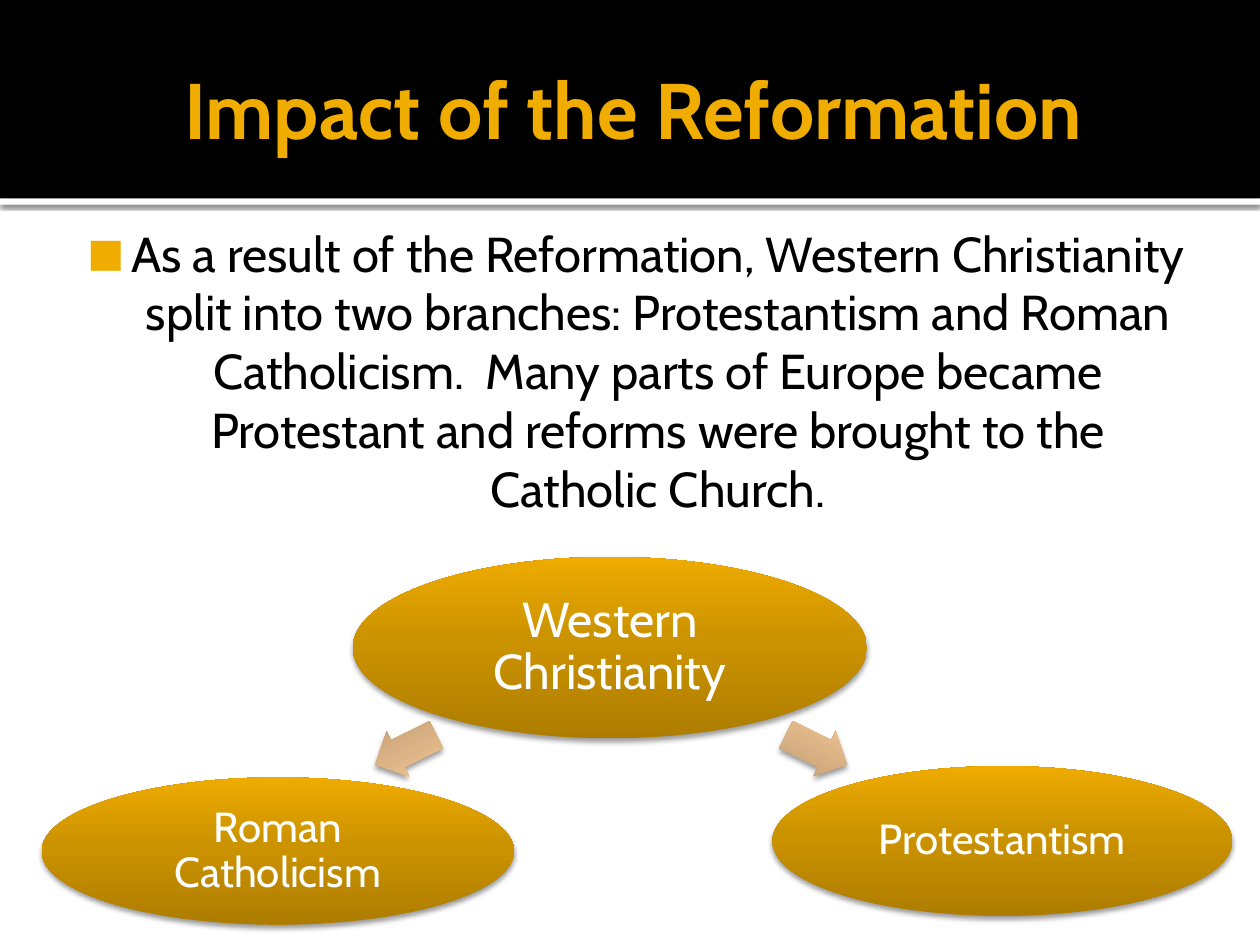
from lxml import etree
from pptx import Presentation
from pptx.dml.color import RGBColor
from pptx.enum.shapes import MSO_SHAPE
from pptx.enum.text import MSO_ANCHOR, PP_ALIGN
from pptx.oxml.ns import qn
from pptx.util import Inches, Pt

RECT, OVAL, ARROW = MSO_SHAPE.RECTANGLE, MSO_SHAPE.OVAL, MSO_SHAPE.RIGHT_ARROW
TOP, MIDDLE = MSO_ANCHOR.TOP, MSO_ANCHOR.MIDDLE
CENTER = PP_ALIGN.CENTER
W, H = 10, 7.5
FONT = "Cabin"
GOLD, BLACK, WHITE = "F0AD00", "000000", "FFFFFF"
GOLD_STOPS = [(0, "AE7D00"), (55, "CC9300"), (100, "EEAB00")]
TAN_STOPS = [(0, "BC9972"), (55, "DDB486"), (100, "FFD29E")]
SOFT_SHADOW = (38, 3.1, 2)
BAR_SHADOW = (60, 2.5, 0.8)


def rgb(color):
    """Turn a hex string into a colour."""
    return RGBColor.from_string(color)


def child(parent, tag, **attrs):
    """Append a DrawingML element with the given attributes."""
    el = etree.SubElement(parent, qn("a:" + tag))
    for name, value in attrs.items():
        el.set(name, str(value))
    return el


def add_shadow(sp, alpha, blur, dist):
    """Give a shape a black shadow falling straight down."""
    effects = sp._element.spPr.find(qn("a:effectLst"))
    shadow = child(effects, "outerShdw", blurRad=Pt(blur), dist=Pt(dist),
                   dir=90 * 60000, algn="ctr", rotWithShape=0)
    child(child(shadow, "srgbClr", val=BLACK), "alpha", val=alpha * 1000)


def set_gradient(sp, stops):
    """Fill a shape with stops running from bottom to top."""
    sp.fill.gradient()
    sp.fill.gradient_angle = 90
    gs_list = sp._element.spPr.find(qn("a:gradFill")).find(qn("a:gsLst"))
    for old in list(gs_list):
        gs_list.remove(old)
    for pos, color in stops:
        child(child(gs_list, "gs", pos=pos * 1000), "srgbClr", val=color)


def add_shape(s, kind, box, fill, shadow=None):
    """Add an unlined shape with a solid colour or a list of gradient stops."""
    sp = s.shapes.add_shape(kind, *map(Inches, box))
    if isinstance(fill, str):
        sp.fill.solid()
        sp.fill.fore_color.rgb = rgb(fill)
    else:
        set_gradient(sp, fill)
    sp.line.fill.background()
    sp.shadow.inherit = False
    if shadow:
        add_shadow(sp, *shadow)
    return sp


def write(sp, text, size, color, insets, anchor=MIDDLE, bold=False):
    """Write one centred paragraph and return it."""
    tf = sp.text_frame
    tf.word_wrap = True
    tf.vertical_anchor = anchor
    tf.margin_left, tf.margin_top, tf.margin_right, tf.margin_bottom = map(Inches, insets)
    p = tf.paragraphs[0]
    p.alignment = CENTER
    r = p.add_run()
    r.text = text
    r.font.name, r.font.size, r.font.bold = FONT, Pt(size), bold
    r.font.color.rgb = rgb(color)
    return p


def add_text(s, box, *args, **kwargs):
    """Add a text box with one paragraph and return the paragraph."""
    return write(s.shapes.add_textbox(*map(Inches, box)), *args, **kwargs)


def add_bullet(p, char, color, percent, left, indent):
    """Give a paragraph a coloured bullet with a hanging indent."""
    pPr = p._p.get_or_add_pPr()
    pPr.set("marL", str(Inches(left)))
    pPr.set("indent", str(Inches(indent)))
    child(child(pPr, "buClr"), "srgbClr", val=color)
    child(pPr, "buSzPct", val=percent * 1000)
    child(pPr, "buFont", typeface=FONT)
    child(pPr, "buChar", char=char)


def add_branch(s, text, size, box):
    """Add a gold ellipse with its label."""
    sp = add_shape(s, OVAL, box, GOLD_STOPS, SOFT_SHADOW)
    write(sp, text, size, WHITE, [0.03] * 4).line_spacing = 0.9


def add_arrow(s, box, rotation):
    """Add a tan block arrow turned by the given degrees."""
    sp = add_shape(s, ARROW, box, TAN_STOPS, SOFT_SHADOW)
    sp.adjustments[0], sp.adjustments[1] = 0.6, 0.5
    sp.rotation = rotation


def main():
    """Build the slide and save it."""
    prs = Presentation()
    prs.slide_width, prs.slide_height = Inches(W), Inches(H)
    s = prs.slides.add_slide(prs.slide_layouts[6])
    band = 0.21 * H
    margin = 0.05 * W
    add_shape(s, RECT, (0, band, W, 0.05), WHITE, BAR_SHADOW)
    add_shape(s, RECT, (0, 0, W, band), BLACK)
    add_text(s, (margin, 0.17, W - 2 * margin, 1.37), "Impact of the Reformation",
             45, GOLD, (0.1, 0.05, 0.05, 0.05), bold=True)
    p = add_text(s, (margin, 1.67, W - 2 * margin, 2.92),
                 "As a result of the Reformation, Western Christianity split into two "
                 "branches: Protestantism and Roman Catholicism.\u00a0 Many parts of Europe "
                 "became Protestant and reforms were brought to the Catholic Church.",
                 28, BLACK, (0.06, 0.1, 0.1, 0.05), anchor=TOP)
    add_bullet(p, "■", GOLD, 80, 0.48, -0.35)
    add_branch(s, "Roman Catholicism", 24, (0.33, 6.17, 3.75, 1.17))
    add_branch(s, "Western Christianity", 28, (2.8, 4.42, 4.08, 1.44))
    add_branch(s, "Protestantism", 24, (6.13, 6.08, 3.65, 1.19))
    for left, rotation in ((6.21, 26.2), (2.95, 153.7)):
        add_arrow(s, (left, 5.75, 0.54, 0.4), rotation)
    prs.save("out.pptx")


if __name__ == "__main__":
    main()
